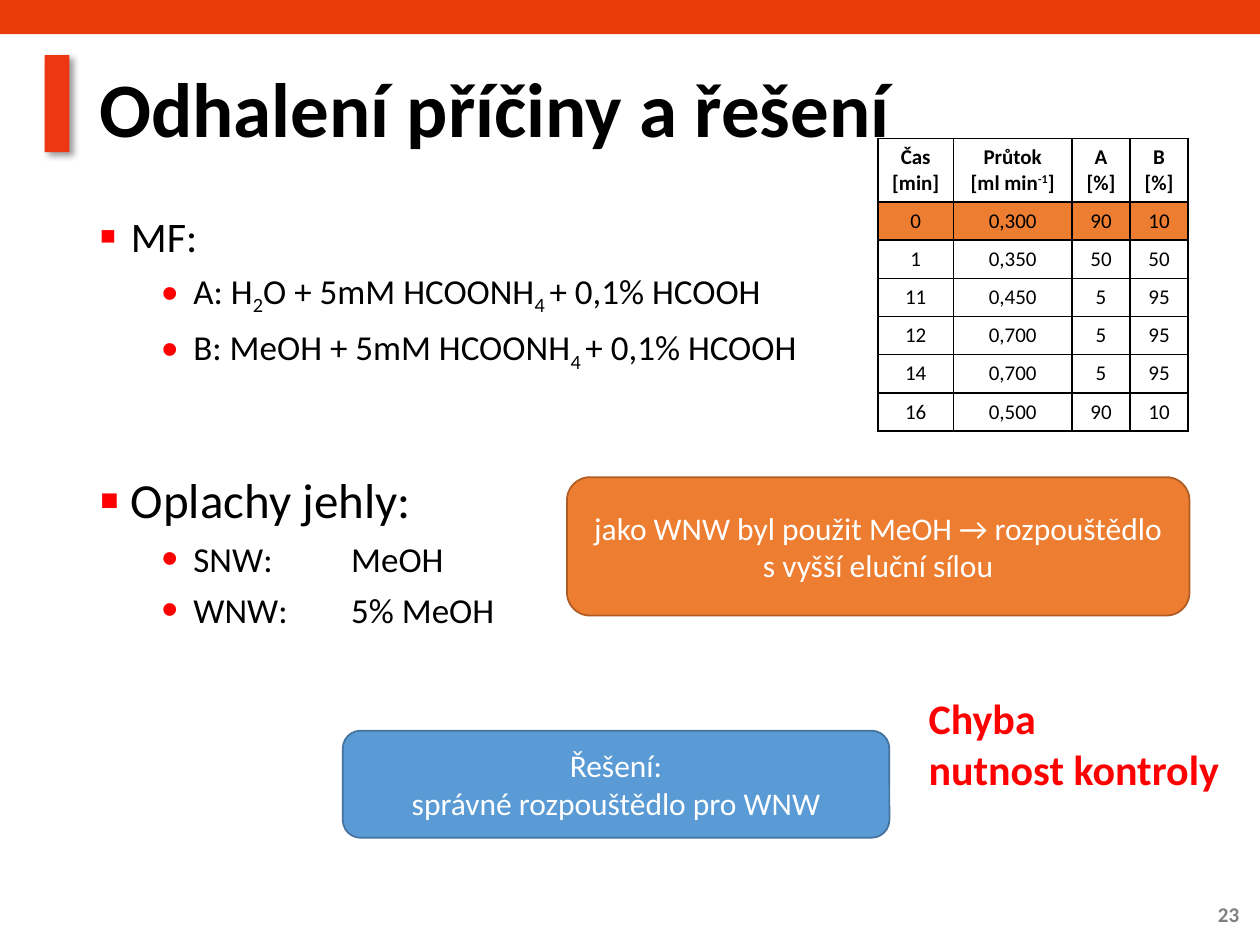
from lxml import etree
from pptx import Presentation
from pptx.dml.color import RGBColor
from pptx.enum import shapes, text
from pptx.oxml import parse_xml
from pptx.oxml.ns import nsdecls, qn
from pptx.util import Cm, Pt

FONT = "Calibri"
BLACK = RGBColor(0x00, 0x00, 0x00)
WHITE = RGBColor(0xFF, 0xFF, 0xFF)
RED = RGBColor(0xFF, 0x00, 0x00)
GREY = RGBColor(0x80, 0x80, 0x80)
BAND = RGBColor(0xE9, 0x3C, 0x09)
ACCENT = RGBColor(0xEE, 0x37, 0x12)
ORANGE = RGBColor(0xED, 0x7D, 0x31)
ORANGE_EDGE = RGBColor(0xAF, 0x5C, 0x24)
BLUE = RGBColor(0x5B, 0x9B, 0xD5)
BLUE_EDGE = RGBColor(0x43, 0x73, 0x9E)

SUB, SUPER = -25, 30
LEFT, CENTER, RIGHT = text.PP_ALIGN.LEFT, text.PP_ALIGN.CENTER, text.PP_ALIGN.RIGHT
TOP, MIDDLE = text.MSO_ANCHOR.TOP, text.MSO_ANCHOR.MIDDLE

MOBILE_PHASE = [
    (0, 24, ["MF:"]),
    (1, 20, ["A: H", ("2", SUB), "O + 5mM HCOONH", ("4 ", SUB), "+ 0,1% HCOOH"]),
    (1, 20, ["B: MeOH + 5mM HCOONH", ("4 ", SUB), "+ 0,1% HCOOH"]),
]
NEEDLE_WASH = [
    (0, 28, ["Oplachy jehly:"]),
    (1, 20, ["SNW: \tMeOH"]),
    (1, 20, ["WNW: \t5% MeOH"]),
]
# Bullet character, its size in percent, indent and space before, by level
BULLETS = [("▪", 120, Cm(0.64), Pt(10)), ("•", 134, Cm(1.9), Pt(5))]
HANGING = Cm(0.64)
TAB_STOP = Cm(5.08)

GRADIENT_HEAD = ["Čas\n[min]", "Průtok\n[ml min", "A\n[%]", "B\n[%]"]
GRADIENT = [
    ("0", "0,300", "90", "10"),
    ("1", "0,350", "50", "50"),
    ("11", "0,450", "5", "95"),
    ("12", "0,700", "5", "95"),
    ("14", "0,700", "5", "95"),
    ("16", "0,500", "90", "10"),
]
COLUMN_WIDTHS = [Cm(1.52), Cm(2.39), Cm(1.17), Cm(1.17)]
HEAD_HEIGHT, ROW_HEIGHT = Cm(1.28), Cm(0.77)


def format_runs(paragraph, size, color, bold=False):
    for run in paragraph.runs:
        run.font.name = FONT
        run.font.size = Pt(size)
        run.font.bold = bold
        run.font.color.rgb = color


def add_runs(paragraph, parts):
    """Add plain strings and (string, baseline percent) pairs as runs."""
    for part in parts:
        wording, baseline = (part, 0) if isinstance(part, str) else part
        run = paragraph.add_run()
        run.text = wording
        if baseline:
            run.font._element.set("baseline", str(baseline * 1000))


def fill_frame(frame, wording, size, color, bold=False, align=LEFT, anchor=TOP):
    frame.text = wording
    frame.vertical_anchor = anchor
    for paragraph in frame.paragraphs:
        paragraph.alignment = align
        format_runs(paragraph, size, color, bold)


def add_label(slide, box, wording, size, color, wrap=True, **style):
    frame = slide.shapes.add_textbox(*box).text_frame
    frame.word_wrap = wrap
    fill_frame(frame, wording, size, color, bold=True, **style)
    return frame


def add_block(slide, kind, box, fill, edge=None):
    block = slide.shapes.add_shape(kind, *box)
    block.shadow.inherit = False
    block.fill.solid()
    block.fill.fore_color.rgb = fill
    if edge is None:
        block.line.fill.background()
    else:
        block.line.color.rgb = edge
        block.line.width = Pt(1)
    return block


def add_callout(slide, box, wording, fill, edge):
    callout = add_block(slide, shapes.MSO_SHAPE.ROUNDED_RECTANGLE, box, fill, edge)
    callout.text_frame.word_wrap = True
    fill_frame(callout.text_frame, wording, 18, WHITE, align=CENTER, anchor=MIDDLE)


def cast_shadow(block):
    effects = block._element.spPr.find(qn("a:effectLst"))
    effects.append(parse_xml(
        f'<a:outerShdw {nsdecls("a")} blurRad="{Pt(4)}" dist="{Pt(3)}" dir="2700000">'
        '<a:srgbClr val="000000"><a:alpha val="40000"/></a:srgbClr></a:outerShdw>'))


def set_bullet(paragraph, level):
    char, percent, indent, space = BULLETS[level]
    properties = paragraph._p.get_or_add_pPr()
    properties.set("marL", str(indent))
    properties.set("indent", str(-HANGING))
    color = etree.SubElement(properties, qn("a:buClr"))
    etree.SubElement(color, qn("a:srgbClr"), val=str(RED))
    etree.SubElement(properties, qn("a:buSzPct"), val=str(percent * 1000))
    etree.SubElement(properties, qn("a:buFont"), typeface="Arial")
    etree.SubElement(properties, qn("a:buChar"), char=char)
    tabs = etree.SubElement(properties, qn("a:tabLst"))
    etree.SubElement(tabs, qn("a:tab"), pos=str(TAB_STOP), algn="l")
    paragraph.level = level
    return space


def add_bullets(slide, box, items):
    frame = slide.shapes.add_textbox(*box).text_frame
    frame.word_wrap = True
    for number, (level, size, parts) in enumerate(items):
        paragraph = frame.add_paragraph() if number else frame.paragraphs[0]
        space = set_bullet(paragraph, level)
        if number:
            paragraph.space_before = space
        add_runs(paragraph, parts)
        format_runs(paragraph, size, BLACK)


def set_borders(cell):
    properties = cell._tc.get_or_add_tcPr()
    for position, side in enumerate(("lnL", "lnR", "lnT", "lnB")):
        properties.insert(position, parse_xml(
            f'<a:{side} {nsdecls("a")} w="{Pt(1)}"><a:solidFill>'
            f'<a:srgbClr val="{BLACK}"/></a:solidFill></a:{side}>'))


def add_gradient_table(slide, left, top):
    rows = [GRADIENT_HEAD, *GRADIENT]
    height = HEAD_HEIGHT + ROW_HEIGHT * len(GRADIENT)
    table = slide.shapes.add_table(
        len(rows), len(COLUMN_WIDTHS), left, top, sum(COLUMN_WIDTHS), height).table
    for column, width in zip(table.columns, COLUMN_WIDTHS):
        column.width = width
    for r, values in enumerate(rows):
        table.rows[r].height = ROW_HEIGHT if r else HEAD_HEIGHT
        for c, value in enumerate(values):
            cell = table.cell(r, c)
            fill_frame(cell.text_frame, value, 12, BLACK, bold=r == 0, align=CENTER)
            if r == 1:
                cell.fill.solid()
                cell.fill.fore_color.rgb = ORANGE
            else:
                cell.fill.background()
            set_borders(cell)
    flow_unit = table.cell(0, 1).text_frame.paragraphs[1]
    add_runs(flow_unit, [("-1", SUPER), "]"])
    format_runs(flow_unit, 12, BLACK, bold=True)


def main():
    deck = Presentation()
    deck.slide_width, deck.slide_height = Cm(25.4), Cm(19.05)
    slide = deck.slides.add_slide(deck.slide_layouts[6])
    rectangle = shapes.MSO_SHAPE.RECTANGLE

    add_block(slide, rectangle, (0, 0, deck.slide_width, Cm(0.69)), BAND)
    cast_shadow(add_block(
        slide, rectangle, (Cm(0.9), Cm(1.11), Cm(0.5), Cm(1.96)), ACCENT))
    add_label(slide, (Cm(23.5), Cm(17.91), Cm(1.73), Cm(1.02)), "23", 12, GREY,
              align=RIGHT, anchor=MIDDLE)
    title = add_label(slide, (Cm(1.75), Cm(1.02), Cm(22.99), Cm(2.49)),
                      "Odhalení příčiny a řešení", 44, BLACK, anchor=MIDDLE)
    title.paragraphs[0].line_spacing = 0.9

    add_bullets(slide, (Cm(1.75), Cm(4.11), Cm(15.9), Cm(3.6)), MOBILE_PHASE)
    add_bullets(slide, (Cm(1.75), Cm(9.35), Cm(9.6), Cm(3.6)), NEEDLE_WASH)
    add_gradient_table(slide, Cm(17.7), Cm(2.79))

    add_callout(slide, (Cm(11.43), Cm(9.62), Cm(12.55), Cm(2.79)),
                "jako WNW byl použit MeOH → rozpouštědlo s vyšší eluční sílou",
                ORANGE, ORANGE_EDGE)
    add_callout(slide, (Cm(6.91), Cm(14.73), Cm(11.02), Cm(2.16)),
                "Řešení:\nsprávné rozpouštědlo pro WNW", BLUE, BLUE_EDGE)
    add_label(slide, (Cm(18.47), Cm(13.84), Cm(6.43), Cm(2.31)),
              "Chyba\nnutnost kontroly", 24, RED, wrap=False)
    deck.save("out.pptx")


if __name__ == "__main__":
    main()
